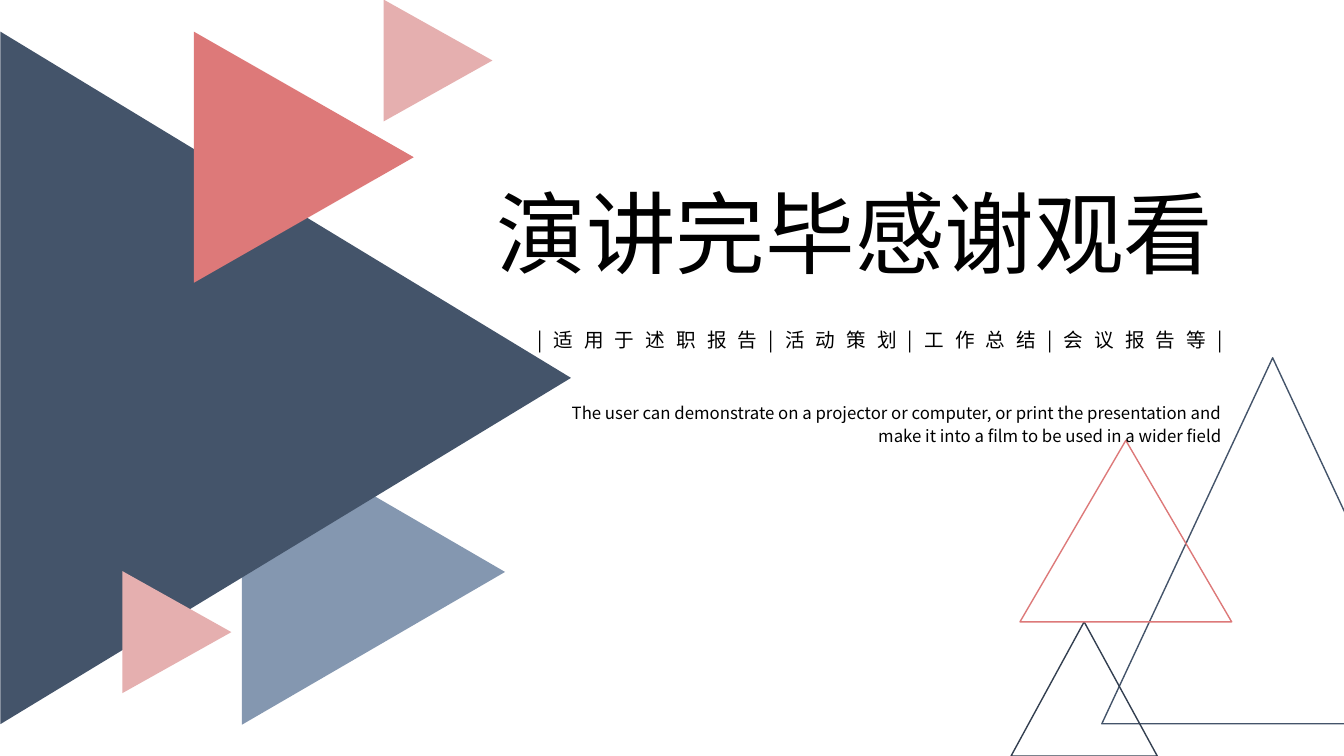
from pptx import Presentation
from pptx.dml.color import RGBColor
from pptx.enum.shapes import MSO_SHAPE
from pptx.enum.text import MSO_AUTO_SIZE as AutoSize, PP_ALIGN as Align
from pptx.oxml.ns import qn
from pptx.util import Pt
from lxml.etree import SubElement

FONT = "Noto Sans CJK SC"
NAVY, DARK_NAVY, STEEL = "44546A", "333F50", "8497B0"
CORAL, ROSE, BLACK = "DD7979", "E5AFAF", "000000"

SOLID_TRIANGLES = [
    ((157.7, 314.6, 218.2, 187.9), STEEL),
    ((-43.2, 66.2, 494.6, 407.5), NAVY),
    ((127.4, 33.8, 179.3, 157), CORAL),
    ((269.3, 4.3, 87.1, 77.8), ROSE),
    ((82.8, 412.6, 87.1, 77.8), ROSE),
]
OUTLINE_TRIANGLES = [
    ((787, 255.6, 244.1, 261.4), NAVY),
    ((722.2, 444.2, 104.4, 95.8), DARK_NAVY),
    ((728.6, 314.6, 151.2, 129.6), CORAL),
]
TITLE = "演讲完毕感谢观看"
USES = "|适用于述职报告|活动策划|工作总结|会议报告等|"
SUMMARY = ("The user can demonstrate on a projector or computer, or print the "
           "presentation and make it into a film to be used in a wider field")


def set_color(color_format, hex_color):
    """Apply a hex colour to a fill colour, line colour or font colour."""
    color_format.rgb = RGBColor.from_string(hex_color)


def set_values(target, values):
    """Set each named attribute of the target."""
    for name, value in values.items():
        setattr(target, name, value)


def add_triangle(slide, frame, rotation=0):
    """Add a shadowless triangle in a frame given in points."""
    triangle = slide.shapes.add_shape(MSO_SHAPE.ISOSCELES_TRIANGLE, *map(Pt, frame))
    triangle.shadow.inherit = False
    triangle.rotation = rotation
    return triangle


def add_solid_triangle(slide, frame, color):
    """Add a filled triangle that points right."""
    triangle = add_triangle(slide, frame, 90)
    triangle.fill.solid()
    set_color(triangle.fill.fore_color, color)
    triangle.line.fill.background()


def add_outline_triangle(slide, frame, color):
    """Add an unfilled triangle that points up."""
    triangle = add_triangle(slide, frame)
    triangle.fill.background()
    triangle.line.width = Pt(1)
    set_color(triangle.line.color, color)


def add_caption(slide, frame, words, size, wrap=True, tracking=0, **layout):
    """Add one paragraph of text with optional letter spacing."""
    box = slide.shapes.add_textbox(*map(Pt, frame)).text_frame
    set_values(box, {"word_wrap": wrap, "auto_size": AutoSize.SHAPE_TO_FIT_TEXT})
    paragraph = box.paragraphs[0]
    set_values(paragraph, layout)
    run = paragraph.add_run()
    run.text = words
    set_values(run.font, {"size": Pt(size), "name": FONT})
    set_color(run.font.color, BLACK)
    properties = run.font._element
    SubElement(properties, qn("a:ea")).set("typeface", FONT)
    if tracking:
        properties.set("spc", str(round(tracking * 100)))


def main():
    """Build the closing slide and save it."""
    deck = Presentation()
    set_values(deck, {"slide_width": Pt(960), "slide_height": Pt(540)})
    slide = deck.slides.add_slide(deck.slide_layouts[6])
    for frame, color in SOLID_TRIANGLES:
        add_solid_triangle(slide, frame, color)
    for frame, color in OUTLINE_TRIANGLES:
        add_outline_triangle(slide, frame, color)
    add_caption(slide, (347.8, 123.8, 547.9, 87.1), TITLE, 64, wrap=False)
    add_caption(slide, (371.5, 282.2, 508.3, 38.9), SUMMARY, 12,
                alignment=Align.RIGHT, line_spacing=1.14)
    add_caption(slide, (376.6, 230.4, 558, 24.5), USES, 14, tracking=7.9,
                space_before=Pt(2.8))
    deck.save("out.pptx")


if __name__ == "__main__":
    main()
